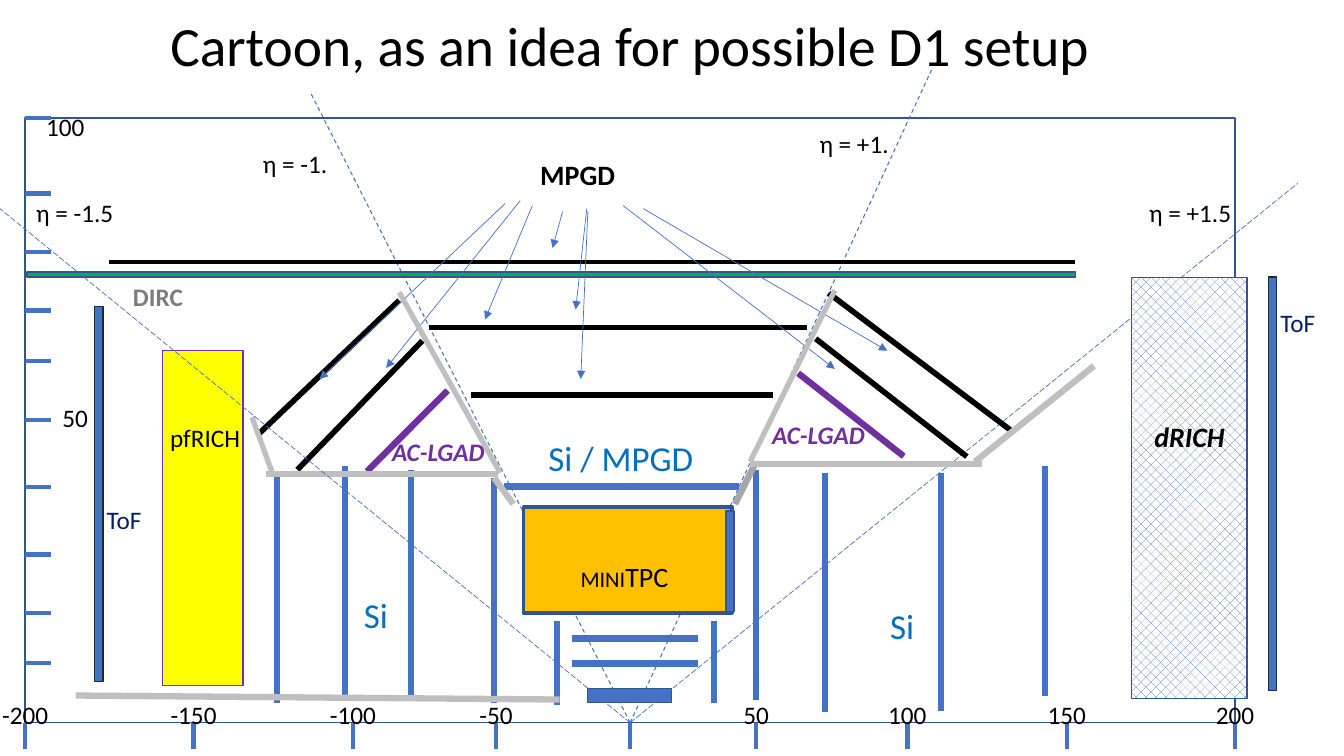
from pptx import Presentation
from pptx.dml.color import RGBColor
from pptx.enum.dml import MSO_LINE, MSO_PATTERN
from pptx.enum.shapes import MSO_CONNECTOR, MSO_SHAPE
from pptx.enum.text import MSO_ANCHOR, PP_ALIGN
from pptx.oxml.ns import qn
from pptx.util import Inches, Pt
from lxml import etree

STRAIGHT, RECTANGLE = MSO_CONNECTOR.STRAIGHT, MSO_SHAPE.RECTANGLE
DASH, LONG_DASH = MSO_LINE.DASH, MSO_LINE.LONG_DASH
HATCH = MSO_PATTERN.PERCENT_30
LEFT, CENTER = PP_ALIGN.LEFT, PP_ALIGN.CENTER
TOP, MIDDLE = MSO_ANCHOR.TOP, MSO_ANCHOR.MIDDLE
BOTTOM_SIDE = 2

BLACK = RGBColor(0x00, 0x00, 0x00)
WHITE = RGBColor(0xFF, 0xFF, 0xFF)
BLUE = RGBColor(0x44, 0x72, 0xC4)
EDGE = RGBColor(0x32, 0x54, 0x91)
SLATE = RGBColor(0x22, 0x2A, 0x35)
NAVY = RGBColor(0x00, 0x20, 0x60)
SKY = RGBColor(0x00, 0x70, 0xC0)
PURPLE = RGBColor(0x70, 0x30, 0xA0)
GREEN = RGBColor(0x00, 0xB0, 0x50)
ORANGE = RGBColor(0xFF, 0xC0, 0x00)
YELLOW = RGBColor(0xFF, 0xFF, 0x00)
SILVER = RGBColor(0xBF, 0xBF, 0xBF)
GRAY = RGBColor(0xA6, 0xA6, 0xA6)
DARK_GRAY = RGBColor(0x7C, 0x7C, 0x7C)

TITLE = "Cartoon, as an idea for possible D1 setup"
FRAME = (0.25, 1.17, 12, 6)
AXIS_Y = FRAME[1] + FRAME[3]
ORIGIN_X = FRAME[0] + FRAME[2] / 2
TICK = 0.26

# Axis values and where their ticks stand
Z_TICKS = [("-200", 0.25), ("-150", 1.92), ("-100", 3.5), ("-50", 4.92), ("", ORIGIN_X),
           ("50", 7.5), ("100", 9), ("150", 10.58), ("200", 12.25)]
R_TICKS = [1.17, 1.92, 2.5, 3.08, 3.58, 4.17, 4.83, 5.5, 6.08, 6.58]

# Far ends of the pseudorapidity lines
ETA_ONE = [(9.25, 0.67), (3.08, 0.92)]
ETA_PLUS_1_5 = (12.87, 1.82)
ETA_MINUS_1_5 = (-0.21, 1.9)

# left, top, width, height, fill, outline, outline width, rotation
INNER_BOXES = [
    (5.83, 6.83, 0.83, 0.14, BLUE, EDGE, 1, 0),
    (5.19, 5.03, 2.07, 1.05, ORANGE, EDGE, 2.5, 0),
    (7.2, 5.07, 0.08, 1, BLUE, EDGE, 1, 0),
    (0.27, 2.7, 10.4, 0.05, GREEN, EDGE, 1, 0),
    (7.78, 4.09, 1.32, 0.05, PURPLE, PURPLE, 1, 38.2),
    (3.48, 4.25, 1.12, 0.05, PURPLE, PURPLE, 1, -45.1),
]
OUTER_BOXES = [
    (1.61, 3.48, 0.8, 3.32, YELLOW, PURPLE, 1, 0),
    (11.22, 2.75, 1.15, 4.18, HATCH, EDGE, 1, 0),
    (0.94, 3.04, 0.08, 3.72, BLUE, SLATE, 1, 0),
    (12.58, 2.75, 0.08, 4.1, BLUE, SLATE, 1, 0),
]

# left, right, height on the slide, colour, width
BARREL_LAYERS = [
    (5.67, 6.92, 6.58, BLUE, 5), (5.67, 6.92, 6.33, BLUE, 5), (5, 7.33, 4.83, BLUE, 5),
    (1.08, 10.66, 2.6, BLACK, 3), (4.25, 8, 3.25, BLACK, 4), (4.67, 7.67, 3.92, BLACK, 4),
]
# x, top, bottom
SI_DISKS = [
    (2.75, 4.69, 6.97), (3.42, 4.62, 6.9), (4.08, 4.66, 6.93), (4.9, 4.74, 6.97),
    (5.52, 6.16, 6.99), (7.08, 6.16, 6.97), (7.5, 4.66, 6.94), (8.18, 4.69, 7.06),
    (9.33, 4.69, 7.05), (10.36, 4.62, 6.9),
]
# x1, y1, x2, y2
MPGD_PLANES = [(8.22, 2.91, 10.04, 4.28), (8.09, 3.36, 9.59, 4.53),
               (3.96, 2.98, 2.55, 4.32), (4.19, 3.38, 2.95, 4.66)]
MPGD_ARROWS = [
    (5.16, 1.99, 3.83, 3.65), (5.28, 2.04, 4.81, 3.17), (5.01, 2.02, 3.17, 3.76),
    (5.58, 2.1, 5.48, 2.46), (5.82, 2.07, 5.71, 3.07), (5.83, 2.1, 5.76, 3.76),
    (6.38, 2.07, 8.8, 3.48), (6.18, 2.04, 8.28, 3.66),
]
# x1, y1, x2, y2, colour, width
SUPPORTS = [
    (7.29, 5, 7.5, 4.58, GRAY, 4.5), (7.44, 4.6, 9.74, 4.6, SILVER, 4.5),
    (9.67, 4.58, 10.85, 3.63, SILVER, 4.5), (2.64, 4.7, 4.94, 4.7, SILVER, 4.5),
    (4.9, 4.74, 5.09, 5, SILVER, 4.5), (7.44, 4.58, 8.28, 2.88, SILVER, 3.75),
    (4.96, 4.69, 3.96, 2.9, SILVER, 3.75), (2.7, 4.69, 2.5, 4.14, SILVER, 3.75),
    (0.75, 6.9, 5.55, 6.94, SILVER, 4.5),
]

LGAD = dict(color=PURPLE, bold=True, italic=True)
SI = dict(size=25, color=SKY)
# text, left, top, width, format
LABELS = [
    ("MPGD", 5.26, 1.51, 1.2, dict(size=20, bold=True)),
    ("Si / MPGD", 5.34, 4.28, 1.9, SI),
    ("Si", 8.73, 5.95, 0.83, SI),
    ("Si", 3.51, 5.84, 0.83, SI),
    ("µiniTPC", 5.66, 5.5, 1.4, dict(size=20, small_caps=True)),
    ("DIRC", 1.22, 2.74, 1.41, dict(color=DARK_GRAY, bold=True)),
    ("AC-LGAD", 3.79, 4.28, 1.24, LGAD),
    ("AC-LGAD", 7.56, 4.11, 1.24, LGAD),
    ("η = +1.", 8.03, 1.22, 1.1, {}),
    ("η = +1.5", 11.3, 1.91, 1.1, {}),
    ("η = -1.", 2.51, 1.42, 1.1, {}),
    ("η = -1.5", 0.26, 1.91, 1.1, {}),
    ("50", 0.52, 3.94, 0.5, {}),
    ("100", 0.36, 1.06, 0.6, {}),
    ("pfRICH", 1.59, 4.14, 1.83, {}),
    ("dRICH", 11.35, 4.11, 1.05, dict(size=20, bold=True, italic=True)),
    ("ToF", 0.96, 4.95, 1.03, dict(color=NAVY)),
    ("ToF", 12.6, 3, 0.7, dict(color=NAVY)),
]

prs = Presentation()
prs.slide_width, prs.slide_height = Inches(13.33), Inches(7.5)
slide = prs.slides.add_slide(prs.slide_layouts[6])


def add_text(text, left, top, width, height=0.4, size=18, color=BLACK, bold=False,
             italic=False, small_caps=False, align=LEFT, anchor=TOP):
    frame = slide.shapes.add_textbox(*map(Inches, (left, top, width, height))).text_frame
    frame.word_wrap = True
    frame.vertical_anchor = anchor
    paragraph = frame.paragraphs[0]
    paragraph.alignment = align
    run = paragraph.add_run()
    run.text = text
    run.font.name, run.font.size = "Calibri", Pt(size)
    run.font.bold, run.font.italic = bold, italic
    run.font.color.rgb = color
    if small_caps:
        run.font._element.set("cap", "small")


def add_line(x1, y1, x2, y2, color=BLUE, width=3, dash=None, arrow=False, source=None):
    """Draw a straight line, joined to the bottom of source if one is given."""
    line = slide.shapes.add_connector(STRAIGHT, *map(Inches, (x1, y1, x2, y2)))
    if source is not None:
        line.begin_connect(source, BOTTOM_SIDE)
    line.line.color.rgb, line.line.width = color, Pt(width)
    if dash is not None:
        line.line.dash_style = dash
    properties = line._element.spPr
    if arrow:
        etree.SubElement(properties.find(qn("a:ln")), qn("a:tailEnd"), type="triangle")
    etree.SubElement(properties, qn("a:effectLst"))


def add_box(left, top, width, height, fill, outline, outline_width, rotation):
    box = slide.shapes.add_shape(RECTANGLE, *map(Inches, (left, top, width, height)))
    box.shadow.inherit = False
    box.rotation = rotation
    box.line.color.rgb, box.line.width = outline, Pt(outline_width)
    if fill is None:
        box.fill.background()
    elif fill == HATCH:
        box.fill.patterned()
        box.fill.pattern = HATCH
        box.fill.fore_color.rgb, box.fill.back_color.rgb = BLUE, WHITE
    else:
        box.fill.solid()
        box.fill.fore_color.rgb = fill
    return box


add_text(TITLE, 1.59, 0.06, 10.15, 0.76, size=39.6, anchor=MIDDLE)
frame = add_box(*FRAME, None, EDGE, 1, 0)


def add_eta(end, width, dash):
    add_line(ORIGIN_X, AXIS_Y, *end, width=width, dash=dash, source=frame)


for value, x in Z_TICKS:
    add_line(x, AXIS_Y, x, AXIS_Y + TICK, source=frame if x == ORIGIN_X else None)
    if value:
        add_text(value, x - 0.4, 6.89, 0.8, align=CENTER)
for y in R_TICKS:
    add_line(FRAME[0], y, FRAME[0] + TICK, y)

for end in ETA_ONE:
    add_eta(end, 0.75, DASH)
for box in INNER_BOXES:
    add_box(*box)
for left, right, y, color, width in BARREL_LAYERS:
    add_line(left, y, right, y, color, width)
for x, top, bottom in SI_DISKS:
    add_line(x, top, x, bottom, width=4.25)
add_eta(ETA_PLUS_1_5, 0.5, LONG_DASH)
for plane in MPGD_PLANES:
    add_line(*plane, color=BLACK, width=4)
for arrow in MPGD_ARROWS:
    add_line(*arrow, width=0.5, arrow=True)
for support in SUPPORTS:
    add_line(*support)
for box in OUTER_BOXES:
    add_box(*box)
add_eta(ETA_MINUS_1_5, 0.5, LONG_DASH)
for text, left, top, width, style in LABELS:
    add_text(text, left, top, width, **style)

prs.save("out.pptx")
